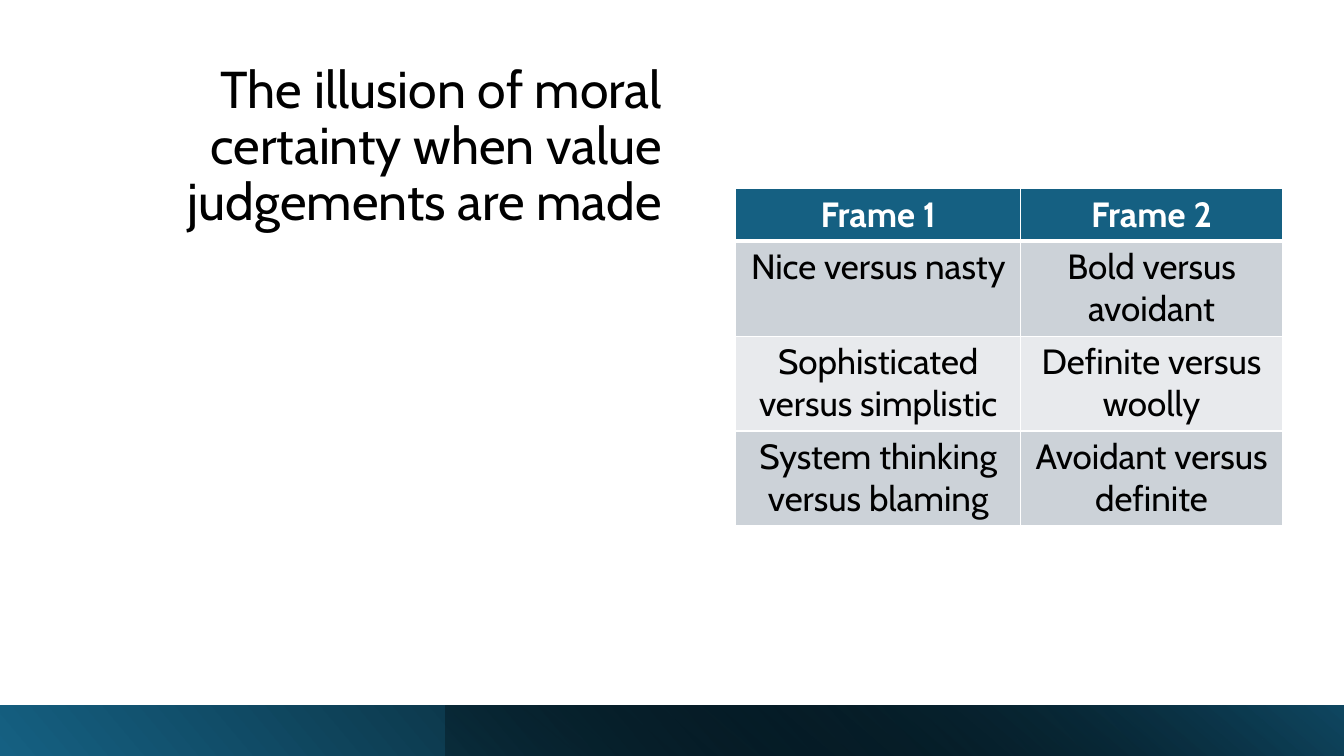
"""Build the slide comparing two frames for value judgements."""
import pptx
import pptx.util
import pptx.dml.color
import pptx.enum.shapes
import pptx.enum.text
import pptx.oxml
import pptx.oxml.ns
from pptx.util import Cm

RGBColor = pptx.dml.color.RGBColor
WHITE = RGBColor(0xFF, 0xFF, 0xFF)
BLACK = RGBColor(0x00, 0x00, 0x00)
BLUE = RGBColor(0x15, 0x60, 0x82)
DEEP_BLUE = RGBColor(0x10, 0x48, 0x62)
GREY = RGBColor(0xCC, 0xD2, 0xD8)
PALE_GREY = RGBColor(0xE8, 0xEA, 0xED)
NAMESPACE = pptx.oxml.ns.nsdecls("a")


def write(para, text, size, color, bold, align):
    para.alignment = align
    span = para.add_run()
    span.text = text
    formats = {"name": "Cabin", "size": pptx.util.Pt(size), "bold": bold}
    for name, value in formats.items():
        setattr(span.font, name, value)
    span.font.color.rgb = color


deck = pptx.Presentation()
deck.slide_width, deck.slide_height = Cm(33.87), Cm(19.05)
page = deck.slides.add_slide(deck.slide_layouts[5])

title = page.shapes.title
title_place = {"left": Cm(2.54), "top": Cm(1.37), "width": Cm(14.4), "height": Cm(4.6)}
for name, value in title_place.items():
    setattr(title, name, value)
title.text_frame.word_wrap = True
title.text_frame.auto_size = pptx.enum.text.MSO_AUTO_SIZE.NONE
title.text_frame.vertical_anchor = pptx.enum.text.MSO_ANCHOR.BOTTOM
heading = title.text_frame.paragraphs[0]
heading.line_spacing = 0.9
write(heading, "The illusion of moral certainty when value judgements are made",
      37, BLACK, False, pptx.enum.text.PP_ALIGN.RIGHT)

bands = [
    (0, 180, 40, [(0, BLUE, 100), (85, BLACK, 100)]),
    (11.22, 0, 230, [(0, BLACK, 26), (100, DEEP_BLUE, 100)]),
]
for left, rotation, angle, stops in bands:
    band = page.shapes.add_shape(pptx.enum.shapes.MSO_SHAPE.RECTANGLE,
                                 Cm(left), Cm(17.78), Cm(33.87 - left), Cm(1.27))
    band.rotation = rotation
    band.shadow.inherit = False
    band.line.fill.background()
    properties = band._element.spPr
    properties.xfrm.set("flipH", "1")
    stop_xml = "".join(
        f'<a:gs pos="{place * 1000}"><a:srgbClr val="{color}">'
        f'<a:alpha val="{opacity * 1000}"/></a:srgbClr></a:gs>'
        for place, color, opacity in stops)
    properties.insert(2, pptx.oxml.parse_xml(
        f'<a:gradFill {NAMESPACE} rotWithShape="1"><a:gsLst>{stop_xml}</a:gsLst>'
        f'<a:lin ang="{angle * 60000}" scaled="0"/></a:gradFill>'))

rows = [
    ("Frame 1", "Frame 2"),
    ("Nice versus nasty", "Bold versus avoidant"),
    ("Sophisticated versus simplistic", "Definite versus woolly"),
    ("System thinking versus blaming", "Avoidant versus definite"),
]
widths = [Cm(7.18), Cm(6.6)]
heights = [Cm(1.32)] + [Cm(2.39)] * 3
table = page.shapes.add_table(len(rows), len(widths), Cm(18.54), Cm(4.76),
                              sum(widths), sum(heights)).table
for column, width in zip(table.columns, widths):
    column.width = width
margins = {"margin_left": Cm(0.21), "margin_right": Cm(0.21),
           "margin_top": Cm(0.11), "margin_bottom": Cm(0.11)}
for row_index, texts in enumerate(rows):
    table.rows[row_index].height = heights[row_index]
    header = row_index == 0
    fill = BLUE if header else (GREY if row_index % 2 else PALE_GREY)
    edges = {"lnL": 1, "lnR": 1, "lnT": 3 if row_index == 1 else 1, "lnB": 3 if header else 1}
    for column_index, text in enumerate(texts):
        cell = table.cell(row_index, column_index)
        for name, value in margins.items():
            setattr(cell, name, value)
        write(cell.text_frame.paragraphs[0], text, 25, WHITE if header else BLACK,
              header, pptx.enum.text.PP_ALIGN.CENTER)
        cell_properties = cell._tc.get_or_add_tcPr()
        for edge, points in edges.items():
            cell_properties.append(pptx.oxml.parse_xml(
                f'<a:{edge} {NAMESPACE} w="{points * 12700}"><a:solidFill>'
                f'<a:srgbClr val="{WHITE}"/></a:solidFill></a:{edge}>'))
        cell.fill.solid()
        cell.fill.fore_color.rgb = fill

deck.save("out.pptx")
